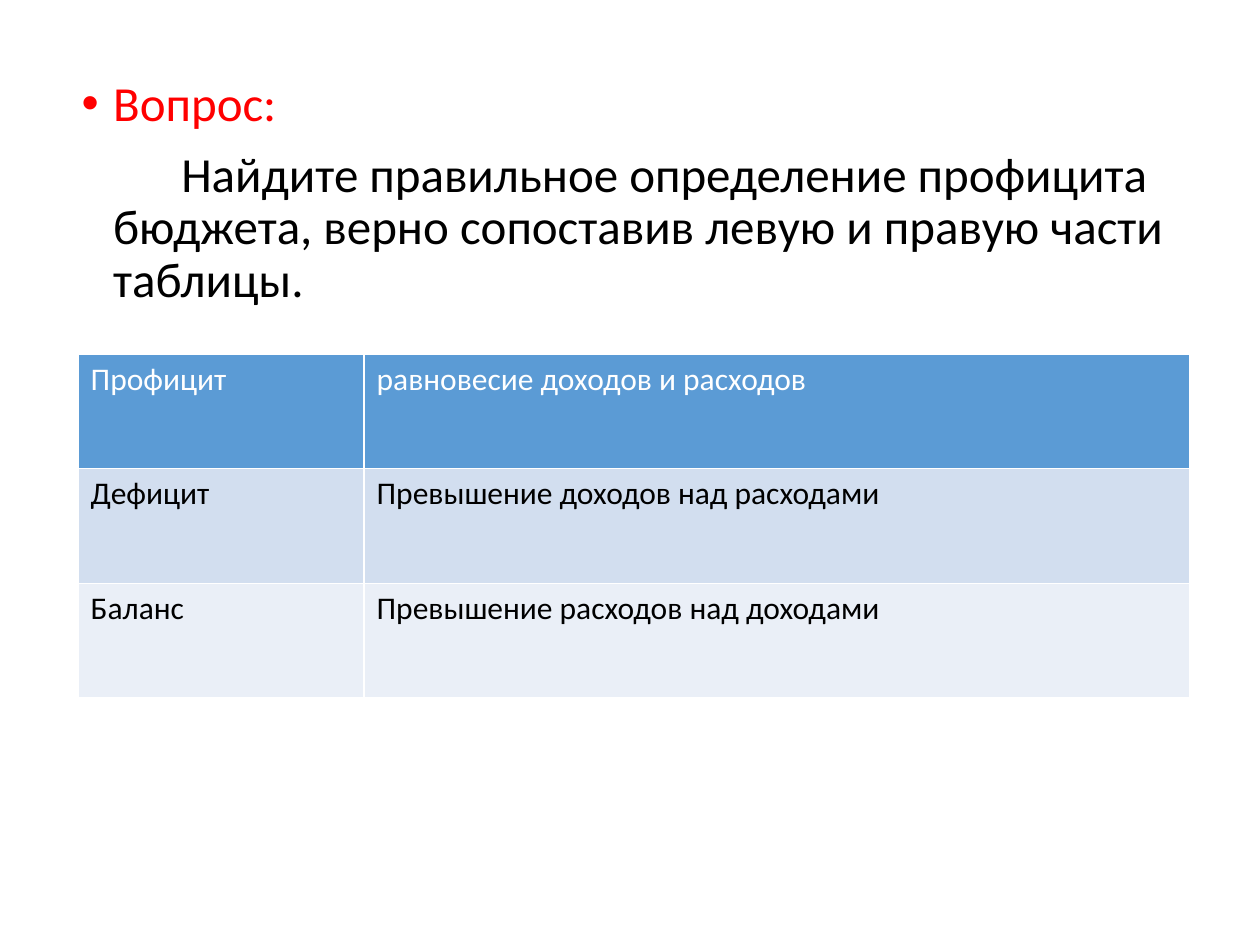
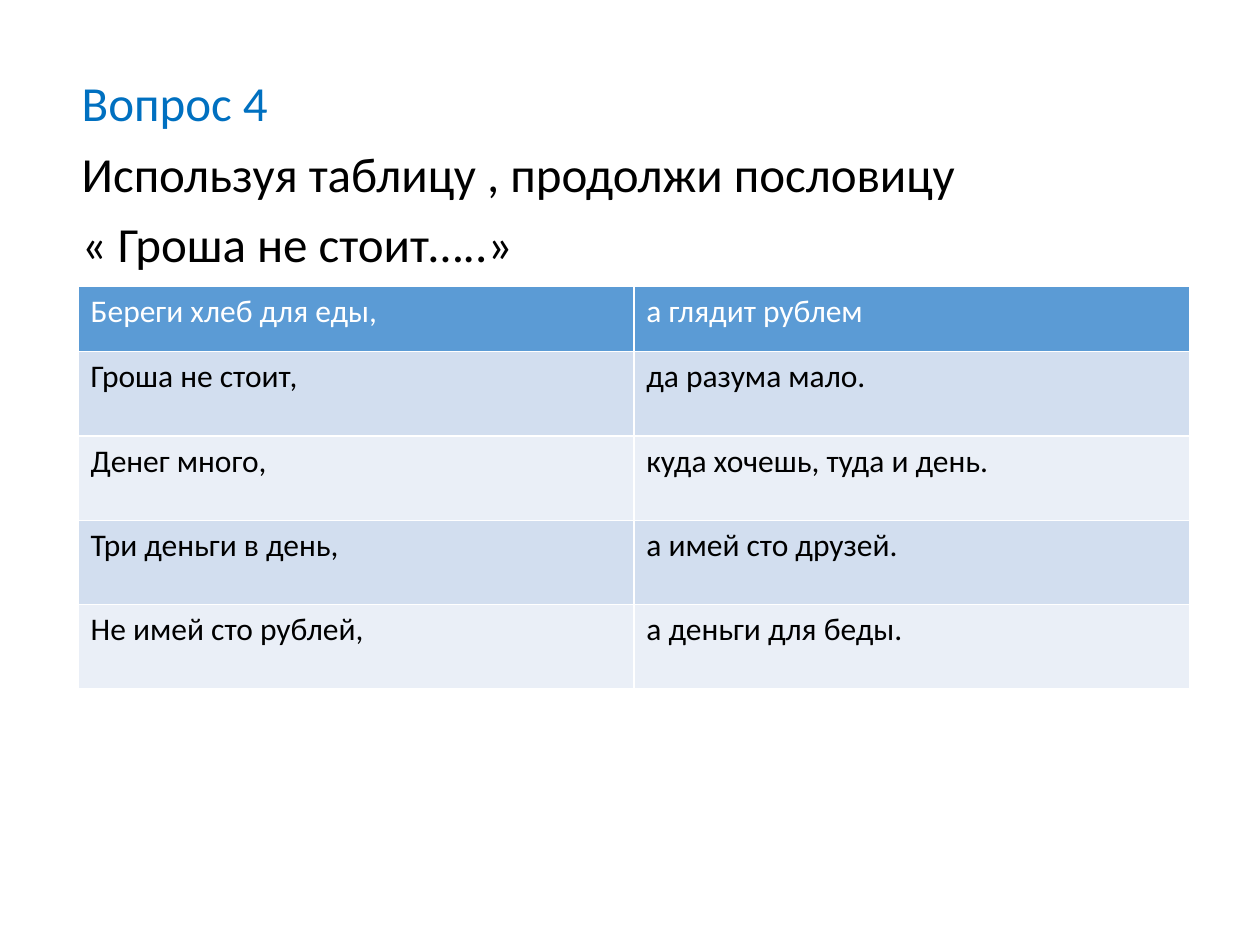
from lxml import etree
from pptx import Presentation
from pptx.dml.color import RGBColor
from pptx.oxml import ns
from pptx.util import Inches, Pt

FONT = "Calibri"
RED = RGBColor(0xFF, 0x00, 0x00)
BLUE = RGBColor(0x00, 0x70, 0xC0)
BLACK = RGBColor(0x00, 0x00, 0x00)
WHITE = RGBColor(0xFF, 0xFF, 0xFF)
HEADER_FILL = RGBColor(0x5B, 0x9B, 0xD5)
BAND_FILLS = (RGBColor(0xD2, 0xDE, 0xEF), RGBColor(0xEA, 0xEF, 0xF7))

LEFT_INDENT = 0.25
HANGING = -0.25
TABLE_LEFT = 0.62

BUDGET_TERMS = [
    ("Профицит", "равновесие доходов и расходов"),
    ("Дефицит", "Превышение доходов над расходами"),
    ("Баланс", "Превышение расходов над доходами"),
]
PROVERBS = [
    ("Береги хлеб для еды,", "а глядит рублем"),
    ("Гроша не стоит,", "да разума мало."),
    ("Денег много,", "куда хочешь, туда и день."),
    ("Три деньги в день,", "а имей сто друзей."),
    ("Не имей сто рублей,", "а деньги для беды."),
]


def set_text(paragraph, wording, size, color):
    run = paragraph.add_run()
    run.text = wording
    style = {"name": FONT, "size": Pt(size), "bold": False}
    for attribute, value in style.items():
        setattr(run.font, attribute, value)
    run.font.color.rgb = color


def indent_paragraph(paragraph, first_line, bullet):
    properties = paragraph._p.get_or_add_pPr()
    properties.set("marL", str(Inches(LEFT_INDENT)))
    properties.set("indent", str(Inches(first_line)))
    if bullet:
        etree.SubElement(properties, ns.qn("a:buFont"), typeface="Arial")
        etree.SubElement(properties, ns.qn("a:buChar"), char="•")


def add_question(slide, height, heading_color, lines, first_line=HANGING, bullet=False):
    """Add a coloured heading followed by the black lines of the task."""
    box = slide.shapes.add_textbox(Inches(0.55), Inches(0.58), Inches(8.95), Inches(height))
    frame = box.text_frame
    frame.word_wrap = True
    for index, line in enumerate(lines):
        is_heading = index == 0
        paragraph = frame.paragraphs[0] if is_heading else frame.add_paragraph()
        indent_paragraph(paragraph, HANGING if is_heading else first_line, bullet and is_heading)
        paragraph.line_spacing = 0.9
        if not is_heading:
            paragraph.space_before = Pt(10)
        set_text(paragraph, line, 28, heading_color if is_heading else BLACK)


def add_cell_borders(cell):
    properties = cell._tc.get_or_add_tcPr()
    for side in ("lnL", "lnR", "lnT", "lnB"):
        border = etree.SubElement(properties, ns.qn(f"a:{side}"), w=str(Pt(1)))
        fill = etree.SubElement(border, ns.qn("a:solidFill"))
        etree.SubElement(fill, ns.qn("a:srgbClr"), val=str(WHITE))


def add_matching_table(slide, top, column_widths, row_heights, pairs):
    """Add a two-column table with a header row and banded rows below it."""
    table = slide.shapes.add_table(
        len(pairs), len(column_widths), Inches(TABLE_LEFT), Inches(top),
        Inches(sum(column_widths)), Inches(sum(row_heights)),
    ).table
    for column, width in zip(table.columns, column_widths):
        column.width = Inches(width)
    for index, (row, height, pair) in enumerate(zip(table.rows, row_heights, pairs)):
        row.height = Inches(height)
        is_header = index == 0
        for cell, wording in zip(row.cells, pair):
            add_cell_borders(cell)
            cell.fill.solid()
            cell.fill.fore_color.rgb = HEADER_FILL if is_header else BAND_FILLS[(index - 1) % 2]
            set_text(cell.text_frame.paragraphs[0], wording, 18, WHITE if is_header else BLACK)


def main():
    deck = Presentation()
    deck.slide_width, deck.slide_height = Inches(10), Inches(7.5)
    blank = deck.slide_layouts[6]

    budget = deck.slides.add_slide(blank)
    add_question(budget, 5.2, RED, [
        "Вопрос:",
        "Найдите правильное определение профицита бюджета, "
        "верно сопоставив левую и правую части таблицы.",
    ], first_line=0.54, bullet=True)
    add_matching_table(budget, 2.81, (2.27, 6.55), [0.91] * 3, BUDGET_TERMS)

    proverb = deck.slides.add_slide(blank)
    add_question(proverb, 4.58, BLUE, [
        "Вопрос 4",
        "Используя таблицу , продолжи пословицу",
        "« Гроша не стоит…..»",
    ])
    add_matching_table(proverb, 2.27, (4.41, 4.41), [0.52] + [0.67] * 4, PROVERBS)

    deck.save("out.pptx")


if __name__ == "__main__":
    main()
